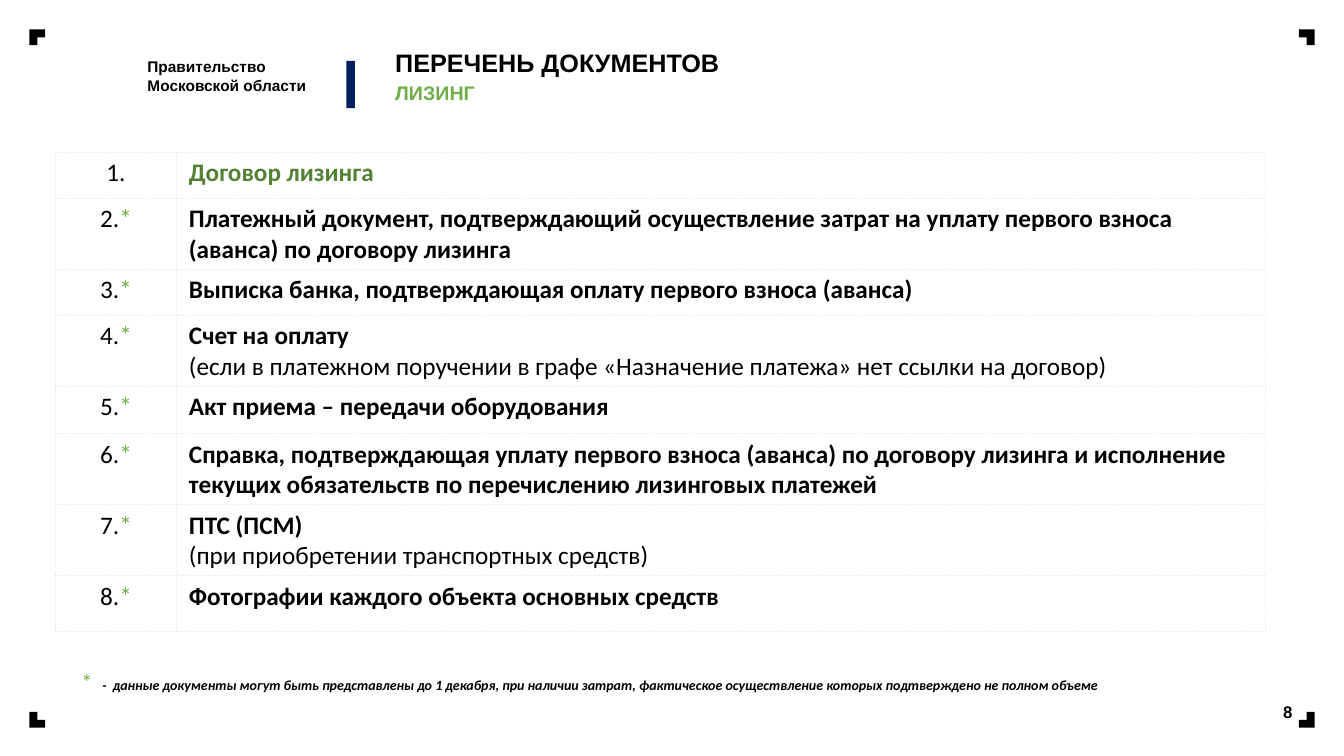
from dataclasses import dataclass

from lxml import etree
from pptx import Presentation
from pptx.dml.color import RGBColor
from pptx.enum.shapes import MSO_SHAPE
from pptx.enum.text import MSO_ANCHOR, PP_ALIGN
from pptx.oxml.ns import qn
from pptx.slide import Slide
from pptx.table import _Cell
from pptx.text.text import _Paragraph, Font
from pptx.util import Emu, Pt

RECTANGLE = MSO_SHAPE.RECTANGLE
CORNER = MSO_SHAPE.CORNER
TOP, MIDDLE = MSO_ANCHOR.TOP, MSO_ANCHOR.MIDDLE
LEFT, CENTER = PP_ALIGN.LEFT, PP_ALIGN.CENTER

EMU_PER_PX = 9525
BLANK_LAYOUT = 6
BLACK, NAVY = "000000", "002060"
GREEN, DARK_GREEN, BORDER_GRAY = "70AD47", "548235", "E7E6E6"
HEADING_FONT, BODY_FONT = "Arial", "Calibri"
CORNER_SIZE = 15
TABLE_LEFT, TABLE_TOP = 53, 145
COLUMN_WIDTHS = (115, 1037)
FOOTNOTE_TABS = (20, 30)


@dataclass(frozen=True)
class Mark:
    left: int
    top: int
    width: int
    height: int
    kind: MSO_SHAPE
    color: str
    rotation: int = 0


@dataclass(frozen=True)
class Label:
    left: int
    top: int
    width: int
    height: int
    lines: tuple[str, ...]
    size: int
    color: str = BLACK
    align: PP_ALIGN = LEFT
    anchor: MSO_ANCHOR = TOP
    line_spacing: float = 1.0


@dataclass(frozen=True)
class Document:
    height: int
    name: str
    note: str = ""
    color: str = BLACK
    starred: bool = True


MARKS = (
    Mark(28, 678, CORNER_SIZE, CORNER_SIZE, CORNER, BLACK),
    Mark(28, 28, CORNER_SIZE, CORNER_SIZE, CORNER, BLACK, 90),
    Mark(1237, 28, CORNER_SIZE, CORNER_SIZE, CORNER, BLACK, 180),
    Mark(1237, 678, CORNER_SIZE, CORNER_SIZE, CORNER, BLACK, 270),
    Mark(330, 58, 8, 45, RECTANGLE, NAVY),
)

LABELS = (
    Label(131, 50, 174, 45, ("Правительство", "Московской области"), 11),
    Label(1200, 661, 53, 33, ("8",), 12, align=CENTER, anchor=MIDDLE),
    Label(367, 44, 913, 45, ("ПЕРЕЧЕНЬ ДОКУМЕНТОВ",), 18, line_spacing=0.9),
    Label(367, 75, 811, 30, ("ЛИЗИНГ",), 14, GREEN, line_spacing=0.9),
)

DOCUMENTS = (
    Document(44, "Договор лизинга", color=DARK_GREEN, starred=False),
    Document(67, "Платежный документ, подтверждающий осуществление затрат "
                 "на уплату первого взноса (аванса) по договору лизинга"),
    Document(44, "Выписка банка, подтверждающая оплату первого взноса (аванса)"),
    Document(67, "Счет на оплату",
             "(если в платежном поручении в графе «Назначение платежа» "
             "нет ссылки на договор)"),
    Document(45, "Акт приема – передачи оборудования"),
    Document(67, "Справка, подтверждающая уплату первого взноса (аванса) "
                 "по договору лизинга и исполнение текущих обязательств "
                 "по перечислению лизинговых платежей"),
    Document(67, "ПТС (ПСМ)", "(при приобретении транспортных средств)"),
    Document(53, "Фотографии каждого объекта основных средств"),
)

FOOTNOTE = ("данные документы могут быть представлены до 1 декабря, при наличии "
            "затрат, фактическое осуществление которых подтверждено не полном объеме")


def px(value: int) -> Emu:
    return Emu(value * EMU_PER_PX)


def rgb(color: str) -> RGBColor:
    return RGBColor.from_string(color)


def set_font(font: Font, name: str, size: int, color: str, bold: bool = False) -> None:
    font.name = name
    font.size = Pt(size)
    font.bold = bold
    font.color.rgb = rgb(color)


def add_run(paragraph: _Paragraph, text: str, color: str) -> Font:
    run = paragraph.add_run()
    run.text = text
    run.font.color.rgb = rgb(color)
    return run.font


def draw_mark(slide: Slide, mark: Mark) -> None:
    shape = slide.shapes.add_shape(
        mark.kind, px(mark.left), px(mark.top), px(mark.width), px(mark.height))
    shape.rotation = mark.rotation
    shape.shadow.inherit = False
    shape.fill.solid()
    shape.fill.fore_color.rgb = rgb(mark.color)
    shape.line.fill.background()


def draw_label(slide: Slide, label: Label) -> None:
    box = slide.shapes.add_textbox(
        px(label.left), px(label.top), px(label.width), px(label.height))
    frame = box.text_frame
    frame.word_wrap = True
    frame.vertical_anchor = label.anchor
    frame.text = "\n".join(label.lines)
    for paragraph in frame.paragraphs:
        paragraph.alignment = label.align
        paragraph.line_spacing = label.line_spacing
        set_font(paragraph.font, HEADING_FONT, label.size, label.color, True)


def style_cell(cell: _Cell) -> None:
    cell.margin_left = cell.margin_right = px(12)
    cell.margin_top = cell.margin_bottom = px(5)
    properties = cell._tc.get_or_add_tcPr()
    for side in ("lnL", "lnR", "lnT", "lnB"):
        line = etree.SubElement(properties, qn(f"a:{side}"), w=str(Pt(1)))
        fill = etree.SubElement(line, qn("a:solidFill"))
        etree.SubElement(fill, qn("a:srgbClr"), val=BORDER_GRAY)
        etree.SubElement(line, qn("a:prstDash"), val="sysDot")
    cell.fill.background()


def draw_documents(slide: Slide) -> None:
    table = slide.shapes.add_table(
        len(DOCUMENTS), len(COLUMN_WIDTHS), px(TABLE_LEFT), px(TABLE_TOP),
        px(sum(COLUMN_WIDTHS)), px(sum(item.height for item in DOCUMENTS))).table
    table.first_row = table.horz_banding = False
    for column, width in zip(table.columns, COLUMN_WIDTHS):
        column.width = px(width)
    for index, document in enumerate(DOCUMENTS):
        table.rows[index].height = px(document.height)
        number_cell, name_cell = table.cell(index, 0), table.cell(index, 1)
        style_cell(number_cell)
        style_cell(name_cell)
        number = number_cell.text_frame.paragraphs[0]
        number.alignment = CENTER
        set_font(number.font, BODY_FONT, 18, BLACK)
        add_run(number, f"{index + 1}.", BLACK)
        if document.starred:
            add_run(number, "*", GREEN)
        name = name_cell.text_frame.paragraphs[0]
        name.text = document.name
        set_font(name.font, BODY_FONT, 18, document.color, True)
        if document.note:
            note = name_cell.text_frame.add_paragraph()
            note.text = document.note
            set_font(note.font, BODY_FONT, 18, BLACK)


def draw_footnote(slide: Slide) -> None:
    box = slide.shapes.add_textbox(px(68), px(632), px(1137), px(36))
    box.text_frame.word_wrap = True
    paragraph = box.text_frame.paragraphs[0]
    tabs = etree.SubElement(paragraph._p.get_or_add_pPr(), qn("a:tabLst"))
    for position in FOOTNOTE_TABS:
        etree.SubElement(tabs, qn("a:tab"), pos=str(px(position)), algn="l")
    paragraph.font.name = BODY_FONT
    add_run(paragraph, "*", GREEN).size = Pt(16)
    font = add_run(paragraph, f"\t-\t{FOOTNOTE}", BLACK)
    font.size = Pt(10)
    font.bold = font.italic = True


def main() -> None:
    presentation = Presentation()
    presentation.slide_width, presentation.slide_height = px(1280), px(720)
    slide = presentation.slides.add_slide(presentation.slide_layouts[BLANK_LAYOUT])
    for mark in MARKS:
        draw_mark(slide, mark)
    for label in LABELS:
        draw_label(slide, label)
    draw_documents(slide)
    draw_footnote(slide)
    presentation.save("out.pptx")


if __name__ == "__main__":
    main()
